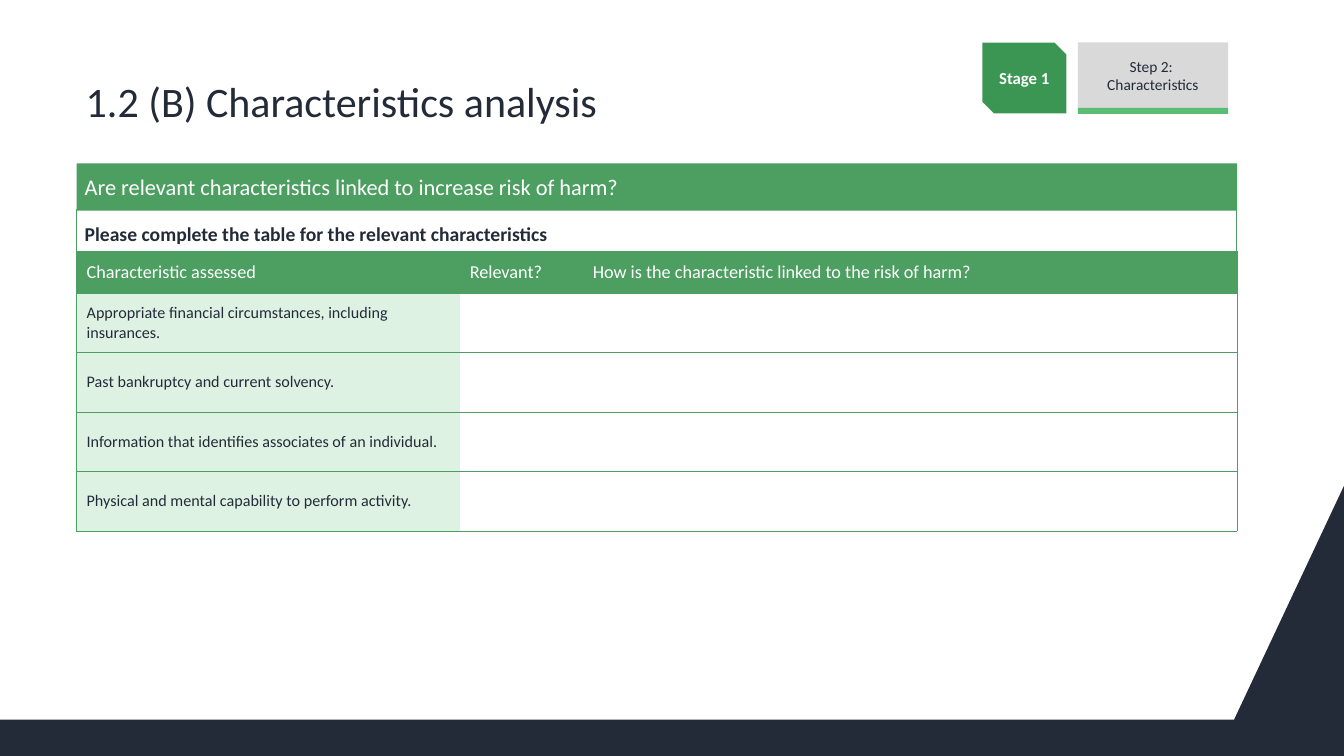
import pptx
import pptx.util
import pptx.dml.color
import pptx.enum.shapes
import pptx.enum.text
import pptx.oxml
import pptx.oxml.ns
from pptx.util import Inches

COLOURS = {
    "navy": "232B39",
    "green": "4C9E61",
    "stage": "3C9653",
    "accent": "5BBD74",
    "mint": "DEF2E3",
    "grey": "D9D9D9",
    "white": "FFFFFF",
}
FONT = "Calibri"
RECTANGLE = pptx.enum.shapes.MSO_SHAPE.RECTANGLE
ALIGN = pptx.enum.text.PP_ALIGN
ANCHOR = pptx.enum.text.MSO_ANCHOR
HEADERS = [
    "Characteristic assessed",
    "Relevant?",
    "How is the characteristic linked to the risk of harm?",
]
CHARACTERISTICS = [
    "Appropriate financial circumstances, including insurances.",
    "Past bankruptcy and current solvency.",
    "Information that identifies associates of an individual.",
    "Physical and mental capability to perform activity.",
]


def rgb(colour):
    return pptx.dml.color.RGBColor.from_string(COLOURS[colour])


class SlideBuilder:
    def __init__(self, width, height):
        self.deck = pptx.Presentation()
        self.deck.slide_width = Inches(width)
        self.deck.slide_height = Inches(height)
        self.slide = self.deck.slides.add_slide(self.deck.slide_layouts[5])
        self.shapes = self.slide.shapes

    def put_text(self, frame, text, size, colour="navy", bold=False,
                 align=ALIGN.LEFT, before=0):
        frame.text = text
        paragraph = frame.paragraphs[0]
        paragraph.alignment = align
        paragraph.space_before = pptx.util.Pt(before)
        style = {"name": FONT, "size": pptx.util.Pt(size), "bold": bold}
        for run in paragraph.runs:
            for attribute, value in style.items():
                setattr(run.font, attribute, value)
            run.font.color.rgb = rgb(colour)

    def set_frame(self, frame, anchor=ANCHOR.MIDDLE, side=0.08, top=0.05):
        layout = {
            "word_wrap": True,
            "auto_size": pptx.enum.text.MSO_AUTO_SIZE.NONE,
            "vertical_anchor": anchor,
            "margin_left": Inches(side),
            "margin_right": Inches(side),
            "margin_top": Inches(top),
            "margin_bottom": Inches(0.05),
        }
        for attribute, value in layout.items():
            setattr(frame, attribute, value)

    def paint(self, shape, fill=None, line=None, line_width=0.75):
        shape.shadow.inherit = False
        if fill:
            shape.fill.solid()
            shape.fill.fore_color.rgb = rgb(fill)
        else:
            shape.fill.background()
        if line:
            shape.line.color.rgb = rgb(line)
            shape.line.width = pptx.util.Pt(line_width)
        else:
            shape.line.fill.background()

    def title(self, text, *box):
        title = self.shapes.title
        title.left, title.top, title.width, title.height = map(Inches, box)
        self.set_frame(title.text_frame)
        self.put_text(title.text_frame, text, 30)

    def footer(self, points):
        start, *rest = [(Inches(x), Inches(y)) for x, y in points]
        outline = self.shapes.build_freeform(*start)
        outline.add_line_segments(rest, close=True)
        self.paint(outline.convert_to_shape(), "navy")

    def block(self, box, kind=RECTANGLE, parent=None, paint=None,
              frame=None, text=None):
        shape = (parent or self.shapes).add_shape(kind, *map(Inches, box))
        self.paint(shape, **(paint or {}))
        if text:
            self.set_frame(shape.text_frame, **(frame or {}))
            self.put_text(shape.text_frame, **text)

    def border(self, cell, edges):
        properties = cell._tc.get_or_add_tcPr()
        for edge in "LRTB":
            line = pptx.oxml.parse_xml(
                f'<a:ln{edge} {pptx.oxml.ns.nsdecls("a")} w="6350">'
                + (f'<a:solidFill><a:srgbClr val="{COLOURS["green"]}"/></a:solidFill>'
                   if edge in edges else "<a:noFill/>")
                + f"</a:ln{edge}>"
            )
            properties.append(line)

    def table(self, box, widths, heights, rows):
        table = self.shapes.add_table(len(rows), len(widths), *map(Inches, box)).table
        table.first_row = table.horz_banding = False
        for column, width in zip(table.columns, widths):
            column.width = Inches(width)
        for row, height in zip(table.rows, heights):
            row.height = Inches(height)
        for r, texts in enumerate(rows):
            for c, text in enumerate(texts):
                cell = table.cell(r, c)
                cell.vertical_anchor = ANCHOR.MIDDLE
                sides = {0: "L", len(widths) - 1: "R"}.get(c, "")
                self.border(cell, "TB" + sides)
                fill = "green" if r == 0 else "mint" if c == 0 else "white"
                cell.fill.solid()
                cell.fill.fore_color.rgb = rgb(fill)
                if text:
                    size, colour = (13, "white") if r == 0 else (11.5, "navy")
                    self.put_text(cell.text_frame, text, size, colour)


def main():
    page = SlideBuilder(13.33, 7.5)
    page.footer([(12.24, 7.14), (0, 7.14), (0, 7.5), (13.33, 7.5), (13.33, 4.82)])
    page.block(
        (0.76, 2.08, 11.5, 0.77),
        paint={"line": "green"},
        frame={"anchor": ANCHOR.TOP, "top": 0.12},
        text={"text": "Please complete the table for the relevant characteristics",
              "size": 14, "bold": True, "before": 6},
    )
    page.block(
        (0.76, 1.62, 11.51, 0.47),
        paint={"fill": "green"},
        text={"text": "Are relevant characteristics linked to increase risk of harm?",
              "size": 16, "colour": "white", "before": 10},
    )
    page.title("1.2 (B) Characteristics analysis", 0.77, 0.49, 11.5, 1.01)
    page.table(
        (0.76, 2.49, 11.51, 2.78),
        [3.8, 1.22, 6.49],
        [0.42] + [0.59] * len(CHARACTERISTICS),
        [HEADERS] + [[name, "", ""] for name in CHARACTERISTICS],
    )
    page.block(
        (9.73, 0.41, 0.86, 0.73),
        kind=pptx.enum.shapes.MSO_SHAPE.SNIP_2_DIAG_RECTANGLE,
        paint={"fill": "stage", "line": "white", "line_width": 2},
        text={"text": "Stage 1", "size": 12, "colour": "white", "bold": True,
              "align": ALIGN.CENTER},
    )
    step = page.shapes.add_group_shape().shapes
    page.block(
        (10.69, 0.42, 1.49, 0.65),
        parent=step,
        paint={"fill": "grey"},
        text={"text": "Step 2: \vCharacteristics", "size": 11, "align": ALIGN.CENTER},
    )
    page.block((10.69, 1.07, 1.49, 0.06), parent=step, paint={"fill": "accent"})
    page.deck.save("out.pptx")


if __name__ == "__main__":
    main()
